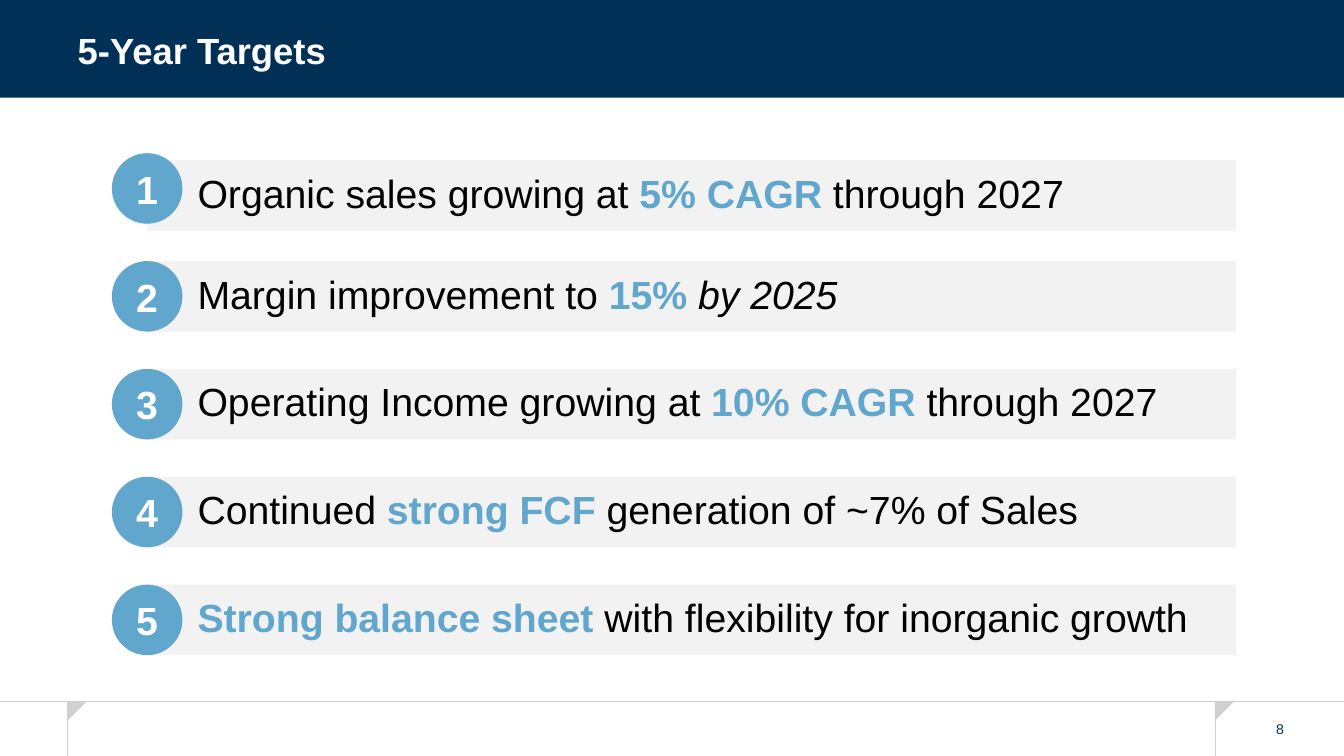
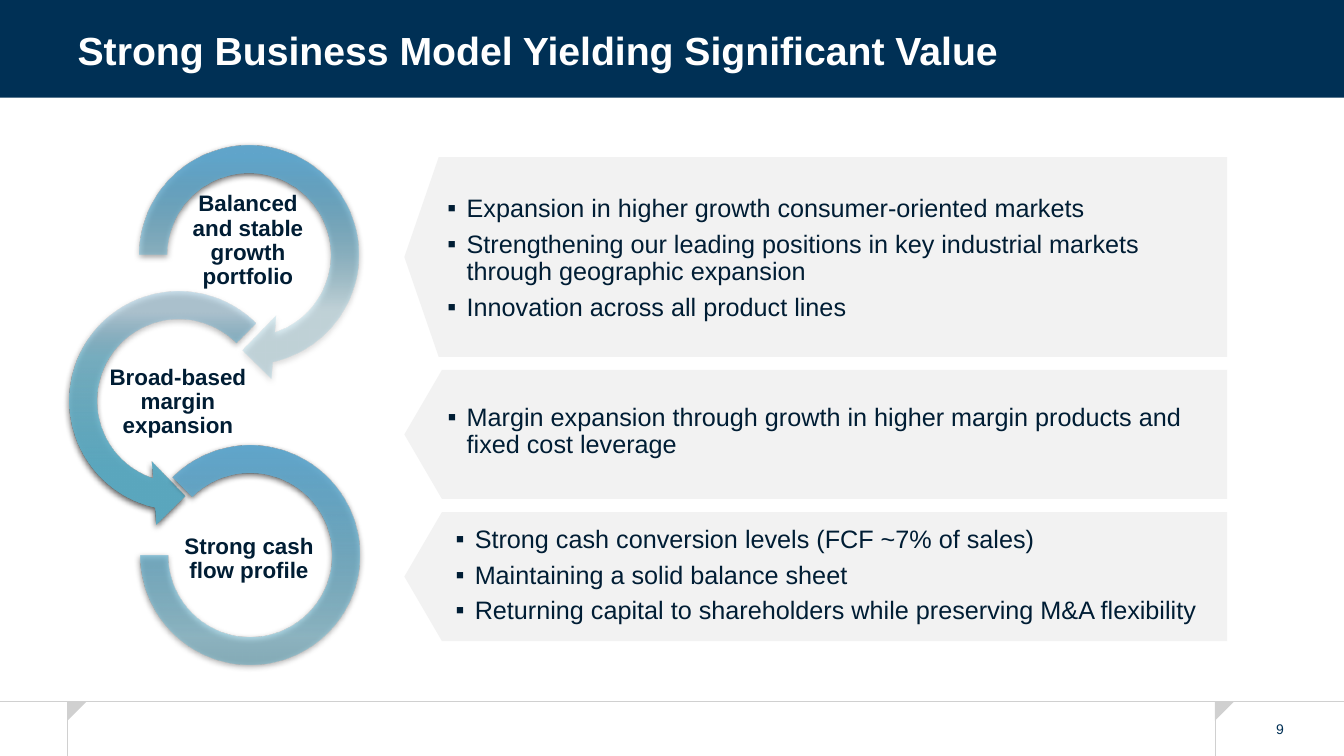
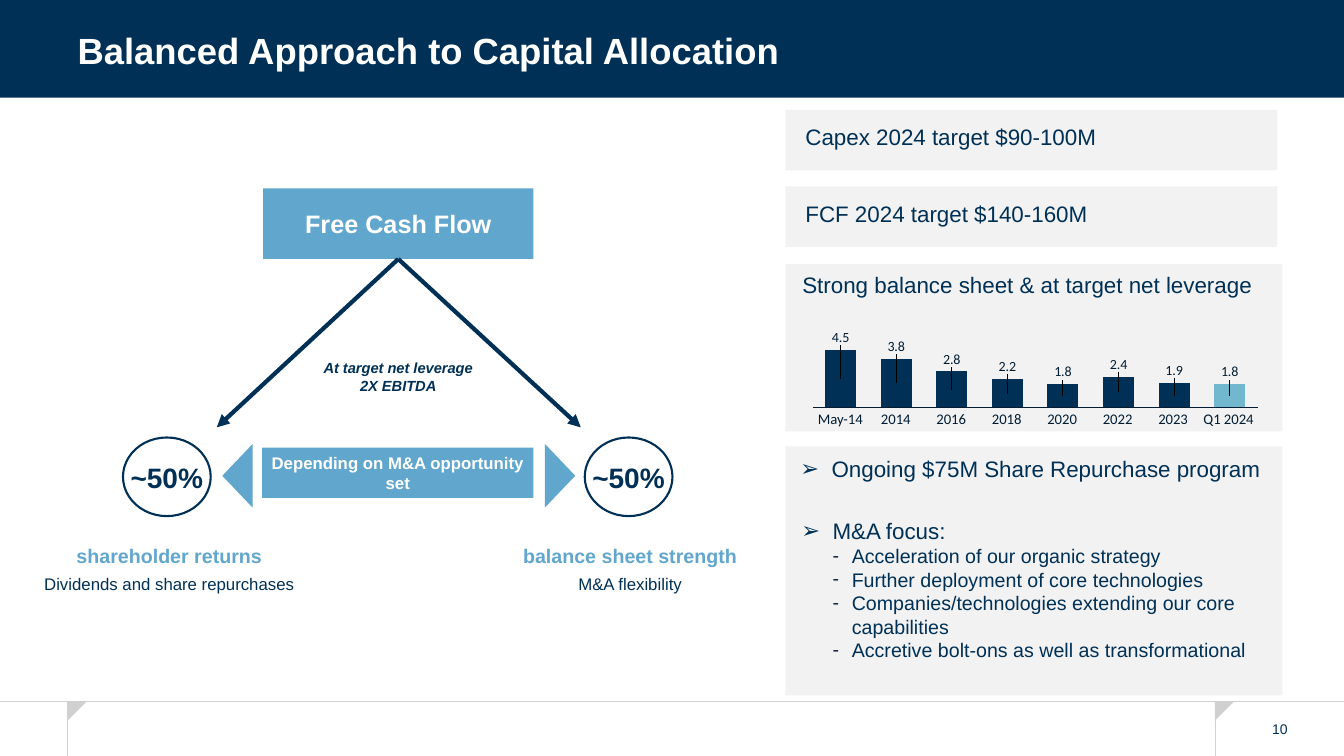
from dataclasses import dataclass

from lxml import etree
from pptx import Presentation
from pptx.chart.data import CategoryChartData
from pptx.dml.color import RGBColor
from pptx.enum.chart import (XL_CHART_TYPE, XL_LABEL_POSITION,
                             XL_TICK_LABEL_POSITION, XL_TICK_MARK)
from pptx.enum.shapes import MSO_CONNECTOR, MSO_SHAPE
from pptx.enum.text import MSO_ANCHOR, PP_ALIGN
from pptx.oxml import parse_xml
from pptx.oxml.ns import nsdecls, qn
from pptx.util import Inches, Pt


@dataclass(frozen=True)
class Theme:
    navy: str = "003055"
    ink: str = "001D34"
    bullet: str = "132246"
    blue: str = "61A6CC"
    aqua: str = "6CBAD3"
    teal: str = "5BA9C1"
    latest: str = "71B8CE"
    panel: str = "F2F2F2"
    rule: str = "D0D0D0"
    white: str = "FFFFFF"
    black: str = "000000"
    font: str = "Arial"
    chart_font: str = "Calibri"
    title: float = 28
    title_small: float = 26
    target: float = 28
    share: float = 20
    lead: float = 18
    body: float = 16
    detail: float = 14
    caption: float = 12
    note: float = 10.5
    tiny: float = 10


T = Theme()
TIGHT = dict(margin_left=0, margin_top=0, margin_right=0, margin_bottom=0)
NO_WRAP = {**TIGHT, "word_wrap": False}
TOP = dict(vertical_anchor=MSO_ANCHOR.TOP)
CENTER = PP_ALIGN.CENTER


def rgb(color):
    return RGBColor.from_string(color)


def set_all(obj, values):
    for name, value in values.items():
        setattr(obj, name, value)


def manual_layout(content):
    return parse_xml(f'<c:layout {nsdecls("c")}><c:manualLayout>{content}'
                     '</c:manualLayout></c:layout>')


class Deck:
    """Holds the presentation, its style and the slide being filled."""

    def __init__(self):
        self.prs = Presentation()
        set_all(self.prs, dict(slide_width=Inches(13.33), slide_height=Inches(7.5)))
        self.layout = self.prs.slide_layouts[5]
        for ph in list(self.layout.placeholders):
            if ph.placeholder_format.idx != 0:
                ph.element.getparent().remove(ph.element)
        self.s = None

    def slide(self, title, number, size=T.title):
        first = self.s is None
        self.s = self.prs.slides.add_slide(self.layout)
        if first:
            self.frame()
        ph = self.s.shapes.title
        set_all(ph, dict(left=Inches(0.67), top=Inches(0.24),
                         width=Inches(11.09), height=Inches(0.57)))
        self.set_text(ph, [title], size=size, color=T.white, bold=True, spacing=0.9)
        self.text((12.42, 7.11, 0.55, 0.25), [str(number)], size=T.tiny, align=CENTER)

    def frame(self):
        """Draw the band and footer rules, then hand them to the layout."""
        parts = [self.shape(MSO_SHAPE.RECTANGLE, (0, 0, 13.33, 0.97), T.navy),
                 self.line((13.33, 6.96), (0, 6.96), T.rule, 0.5)]
        for x in (0.67, 12.05):
            parts += [self.line((x, 6.96), (x, 7.5), T.rule, 0.5),
                      self.shape(MSO_SHAPE.RIGHT_TRIANGLE, (x, 6.96, 0.19, 0.19),
                                 T.rule, rotation=90)]
        for part in parts:
            self.layout.shapes.element.append(part.element)

    def shape(self, kind, box, fill=None, line=None, adjustments=(), rotation=0):
        sp = self.s.shapes.add_shape(kind, *map(Inches, box))
        sp.shadow.inherit = False
        sp.rotation = rotation
        for i, value in enumerate(adjustments):
            sp.adjustments[i] = value
        if fill:
            sp.fill.solid()
            sp.fill.fore_color.rgb = rgb(fill)
        else:
            sp.fill.background()
        if line:
            sp.line.color.rgb = rgb(line)
            sp.line.width = Pt(1.5)
        else:
            sp.line.fill.background()
        return sp

    def ring(self, kind, box, adjustments, stops):
        """A ring with a vertical gradient of (place, colour, opacity) and a shadow."""
        sp = self.shape(kind, box, adjustments=adjustments)
        marks = "".join(
            f'<a:gs pos="{pos * 1000}"><a:srgbClr val="{color}">'
            f'<a:alpha val="{alpha * 1000}"/></a:srgbClr></a:gs>'
            for pos, color, alpha in stops)
        gradient = parse_xml(f'<a:gradFill {nsdecls("a")} rotWithShape="1"><a:gsLst>{marks}'
                             '</a:gsLst><a:lin ang="5400000" scaled="0"/></a:gradFill>')
        props = sp.element.spPr
        props.replace(props.find(qn("a:noFill")), gradient)
        props.find(qn("a:effectLst")).append(parse_xml(
            f'<a:outerShdw {nsdecls("a")} blurRad="{Pt(4.5)}" dist="{Pt(1.5)}" '
            f'dir="5400000" rotWithShape="0"><a:srgbClr val="{T.black}">'
            '<a:alpha val="63000"/></a:srgbClr></a:outerShdw>'))

    def left_pointer(self, x, y, w, h, head):
        """A panel with a point on its left; the arrow is turned a quarter."""
        shift = (w - h) / 2
        self.shape(MSO_SHAPE.DOWN_ARROW, (x + shift, y - shift, h, w), T.panel,
                   adjustments=(1, head), rotation=90)

    def line(self, start, end, color, width, arrow=False):
        cn = self.s.shapes.add_connector(MSO_CONNECTOR.STRAIGHT,
                                         *map(Inches, (*start, *end)))
        cn.line.color.rgb = rgb(color)
        cn.line.width = Pt(width)
        props = cn.element.spPr
        if arrow:
            etree.SubElement(props.find(qn("a:ln")), qn("a:tailEnd"), type="triangle")
        etree.SubElement(props, qn("a:effectLst"))
        return cn

    def text(self, box, paragraphs, frame=None, **look):
        sp = self.s.shapes.add_textbox(*map(Inches, box))
        self.set_text(sp, paragraphs, frame, **look)

    def set_text(self, sp, paragraphs, frame=None, **look):
        """Each paragraph is a string, a (text, look) pair or a list of those."""
        tf = sp.text_frame
        set_all(tf, {"word_wrap": True, "vertical_anchor": MSO_ANCHOR.MIDDLE,
                     **(frame or {})})
        for i, para in enumerate(paragraphs):
            p = tf.add_paragraph() if i else tf.paragraphs[0]
            runs = [(r, {}) if isinstance(r, str) else r
                    for r in (para if isinstance(para, list) else [para])]
            style = {**look, **runs[0][1]}
            if "bullet" in style:
                self.bullet(p, *style["bullet"])
            set_all(p, dict(alignment=style.get("align", PP_ALIGN.LEFT),
                            line_spacing=style.get("spacing", 1.0),
                            space_before=Pt(style.get("before", 0) if i else 0)))
            for words, own in runs:
                self.run(p, words, {**look, **own})

    def run(self, p, words, look):
        r = p.add_run()
        r.text = words
        set_all(r.font, dict(name=look.get("font", T.font), size=Pt(look["size"]),
                             bold=look.get("bold", False),
                             italic=look.get("italic", False)))
        r.font.color.rgb = rgb(look.get("color", T.navy))

    def bullet(self, p, char, margin, hang, color):
        props = p._p.get_or_add_pPr()
        props.set("marL", str(Inches(margin)))
        props.set("indent", str(-Inches(hang)))
        clr = etree.SubElement(props, qn("a:buClr"))
        etree.SubElement(clr, qn("a:srgbClr"), val=color)
        etree.SubElement(props, qn("a:buFont"), typeface=T.font)
        etree.SubElement(props, qn("a:buChar"), char=char)

    def columns(self, box, names, values, plot):
        """Bare columns with a value above each; plot is x, y, w, h in parts of the box."""
        data = CategoryChartData(number_format="0.0")
        data.categories = names
        data.add_series("Net leverage", values)
        chart = self.s.shapes.add_chart(XL_CHART_TYPE.COLUMN_STACKED,
                                        *map(Inches, box), data).chart
        set_all(chart, dict(has_legend=False, has_title=False))
        set_all(chart.font, dict(name=T.chart_font, size=Pt(T.tiny)))
        chart.font.color.rgb = rgb(T.ink)
        set_all(chart.value_axis, dict(minimum_scale=0, maximum_scale=max(values),
                                       has_major_gridlines=False, visible=False))
        axis = chart.category_axis
        set_all(axis, dict(tick_label_position=XL_TICK_LABEL_POSITION.NONE,
                           major_tick_mark=XL_TICK_MARK.NONE,
                           minor_tick_mark=XL_TICK_MARK.NONE))
        axis.format.line.color.rgb = rgb(T.ink)
        axis.format.line.width = Pt(0.75)
        set_all(chart.plots[0], dict(gap_width=80, overlap=100, vary_by_categories=False))
        series = chart.plots[0].series[0]
        series.format.fill.solid()
        series.format.fill.fore_color.rgb = rgb(T.navy)
        last = series.points[len(values) - 1].format.fill
        last.solid()
        last.fore_color.rgb = rgb(T.latest)
        for i in range(len(values)):
            label = series.points[i].data_label
            label.font.size = Pt(T.tiny)
            label.position = XL_LABEL_POSITION.CENTER
        for label, value in zip(chart.element.xpath(".//c:dLbl"), values):
            lift = plot[3] * value / max(values) / 2 + 0.1
            label.insert(1, manual_layout(f'<c:x val="0"/><c:y val="{-lift:.3f}"/>'))
        area = chart.element.xpath(".//c:plotArea")[0]
        for old in area.findall(qn("c:layout")):
            area.remove(old)
        area.insert(0, manual_layout(
            '<c:layoutTarget val="inner"/><c:xMode val="edge"/><c:yMode val="edge"/>'
            + "".join(f'<c:{k} val="{v}"/>' for k, v in zip("xywh", plot))))


def targets(deck):
    deck.slide("5-Year Targets", 8, T.title_small)
    key = dict(color=T.blue, bold=True)
    rows = [
        ["Organic sales growing at ", ("5% CAGR ", key), "through 2027"],
        ["Margin improvement to ", ("15% ", key), ("by 2025", dict(italic=True))],
        ["Operating Income growing at ", ("10% CAGR", key), " through 2027"],
        ["Continued ", ("strong FCF ", key), "generation of ~7% of Sales"],
        [("Strong balance sheet ", key), "with flexibility for inorganic growth"],
    ]
    for i, row in enumerate(rows):
        y = 1.52 + 1.07 * i
        bar = deck.shape(MSO_SHAPE.RECTANGLE, (1.46, max(y, 1.59), 10.8, 0.7), T.panel)
        deck.set_text(bar, [row], {**TIGHT, "margin_left": Inches(0.5)},
                      size=T.target, color=T.black, spacing=0.9)
        badge = deck.shape(MSO_SHAPE.OVAL, (1.11, y, 0.7, 0.7), T.blue)
        deck.set_text(badge, [str(i + 1)], NO_WRAP, size=T.target, color=T.white,
                      bold=True, align=CENTER)


def business_model(deck):
    deck.slide("Strong Business Model Yielding Significant Value", 9)
    deck.ring(MSO_SHAPE.CIRCULAR_ARROW, (1.21, 1.27, 2.52, 2.52),
              (0.11, 11.423, 45, 108, 0.125), [(11, T.blue, 100), (71, T.aqua, 23)])
    deck.ring(MSO_SHAPE.LEFT_CIRCULAR_ARROW, (0.51, 2.72, 2.52, 2.52),
              (0.11, 11.423, 63, 189, 0.125),
              [(15, T.blue, 31), (33, T.aqua, 70), (76, T.teal, 97)])
    deck.ring(MSO_SHAPE.BLOCK_ARC, (1.39, 4.42, 2.17, 2.17), (135, 108, 0.127),
              [(0, T.blue, 100), (87, T.aqua, 50), (100, T.teal, 50)])
    for box, words in [
        ((1.76, 1.88, 1.4, 1.02), "Balanced and stable growth portfolio"),
        ((0.96, 3.64, 1.61, 0.7), "Broad-based margin expansion"),
        ((1.77, 5.2, 1.4, 0.7), "Strong cash flow profile"),
    ]:
        deck.text(box, [words], TIGHT, size=T.body, color=T.ink, bold=True,
                  align=CENTER, spacing=0.9)

    panels = [
        (1.56, 1.98, 0.172, (4.34, 1.89, 7.83, 1.36),
         ["Expansion in higher growth consumer-oriented markets",
          "Strengthening our leading positions in key industrial markets "
          "through geographic expansion",
          "Innovation across all product lines"]),
        (3.67, 1.28, 0.291, (4.34, 3.72, 7.81, 1.13),
         ["Margin expansion through growth in higher margin products "
          "and fixed cost leverage"]),
        (5.08, 1.28, 0.291, (4.42, 5.11, 7.81, 1.21),
         ["Strong cash conversion levels (FCF ~7% of sales)",
          "Maintaining a solid balance sheet",
          "Returning capital to shareholders while preserving M&A flexibility"]),
    ]
    for y, h, head, box, points in panels:
        deck.left_pointer(4.01, y, 8.16, h, head)
        deck.text(box, points, size=T.lead, color=T.ink, spacing=0.9, before=6,
                  bullet=("▪", 0.19, 0.19, T.ink))


def cash_flow_split(deck):
    for box, words, size in [
        ((2.61, 1.87, 2.68, 0.7), "Free Cash Flow", T.lead),
        ((2.6, 4.44, 2.69, 0.5), "Depending on M&A opportunity set", T.caption),
    ]:
        sp = deck.shape(MSO_SHAPE.RECTANGLE, box, T.blue)
        deck.set_text(sp, [words], TIGHT, size=size, color=T.white, bold=True,
                      align=CENTER)
    sides = [
        (1.22, 2.04, 270, 2.15, 0.16, "shareholder returns",
         "Dividends and share repurchases"),
        (5.8, 5.24, 90, 5.76, 4.73, "balance sheet strength", "M&A flexibility"),
    ]
    for circle_x, pointer_x, turn, arrow_x, text_x, use, detail in sides:
        circle = deck.shape(MSO_SHAPE.OVAL, (circle_x, 4.34, 0.87, 0.78), T.white, T.navy)
        deck.set_text(circle, ["~50%"], NO_WRAP, size=T.share, bold=True, align=CENTER)
        deck.shape(MSO_SHAPE.ISOSCELES_TRIANGLE, (pointer_x, 4.57, 0.63, 0.3),
                   T.blue, rotation=turn)
        deck.line((3.95, 2.57), (arrow_x, 4.24), T.navy, 3, arrow=True)
        deck.text((text_x, 5.37, 3.04, 0.84),
                  [(use, dict(size=T.detail, color=T.blue, bold=True)), detail],
                  TOP, size=T.caption, align=CENTER, spacing=0.9, before=6)
    deck.text((0.11, 3.46, 7.68, 0.56), ["At target net leverage", "2X EBITDA"], TIGHT,
              size=T.note, bold=True, italic=True, align=CENTER)


def capital_allocation(deck):
    deck.slide("Balanced Approach to Capital Allocation", 10, T.title_small)
    cash_flow_split(deck)
    for y, w, h in [(1.09, 4.88, 0.6), (1.85, 4.88, 0.6),
                    (2.62, 4.93, 1.66), (4.43, 4.93, 2.47)]:
        deck.shape(MSO_SHAPE.RECTANGLE, (7.79, y, w, h), T.panel)
    for x, y, words in [
        (7.89, 1.17, "Capex 2024 target $90-100M"),
        (7.89, 1.94, "FCF 2024 target $140-160M"),
        (7.86, 2.64, "Strong balance sheet & at target net leverage"),
    ]:
        deck.text((x, y, 4.86, 0.37), [words], TOP, size=T.body)

    periods = ["May-14", "2014", "2016", "2018", "2020", "2022", "2023", "Q1 2024"]
    deck.columns((7.97, 3.1, 4.59, 1.2), periods,
                 (4.5, 3.8, 2.8, 2.2, 1.8, 2.4, 1.9, 1.8), (0.02, 0.308, 0.961, 0.477))
    for i, period in enumerate(periods):
        deck.text((8.06 + 0.55 * i, 4.09, 0.55, 0.16), [period], {**NO_WRAP, **TOP},
                  size=T.note, font=T.chart_font, color=T.ink, align=CENTER, spacing=0.9)

    arrow = ("➢", 0.31, 0.31, T.navy)
    dash = dict(size=T.detail, bullet=("-", 0.5, 0.19, T.bullet))
    deck.text((7.84, 4.47, 4.94, 0.37), ["Ongoing $75M Share Repurchase program"], TOP,
              size=T.body, bullet=arrow)
    focus = ["Acceleration of our organic strategy",
             "Further deployment of core technologies",
             "Companies/technologies extending our core capabilities",
             "Accretive bolt-ons as well as transformational"]
    deck.text((7.85, 5.08, 4.97, 1.82), ["M&A focus:"] + [(f, dash) for f in focus], TOP,
              size=T.body, bullet=arrow)


def main():
    deck = Deck()
    for build in (targets, business_model, capital_allocation):
        build(deck)
    deck.prs.save("out.pptx")


if __name__ == "__main__":
    main()
